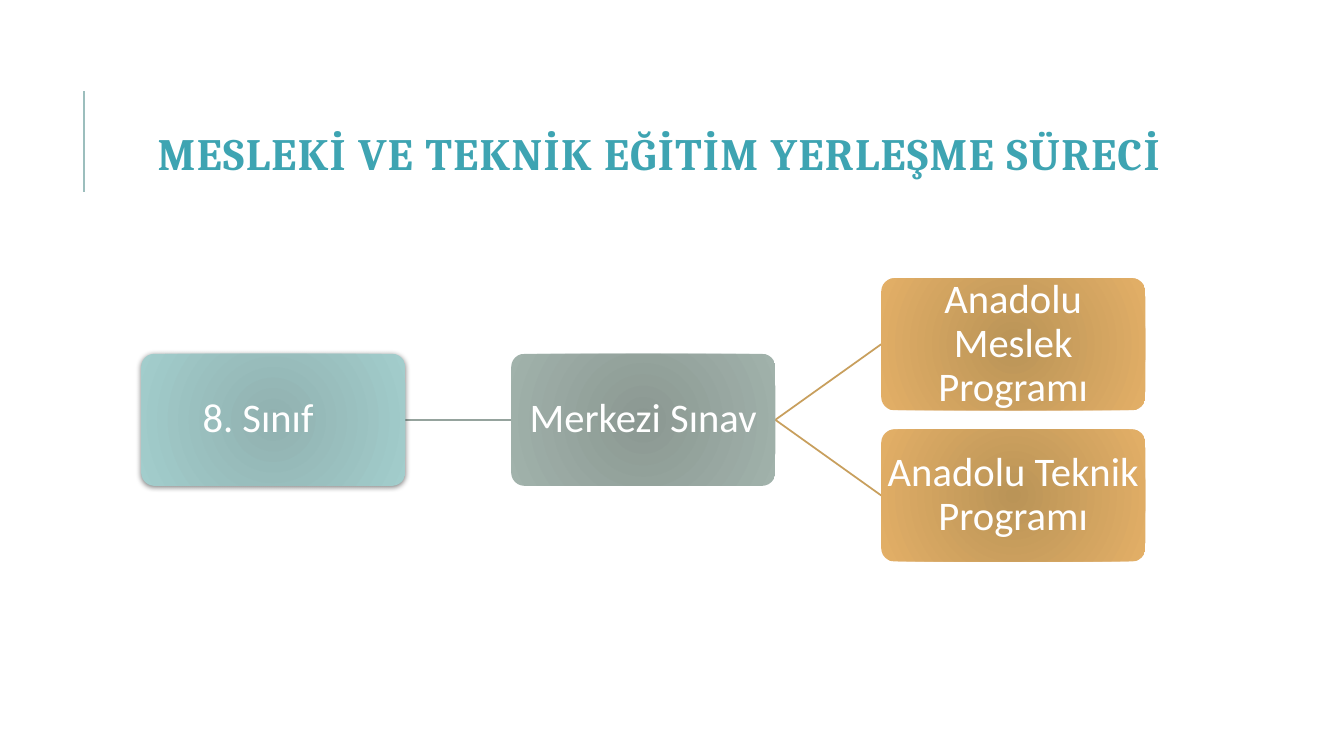
from dataclasses import dataclass

from lxml import etree
from pptx import Presentation
from pptx.dml.color import RGBColor
from pptx.enum.shapes import MSO_CONNECTOR, MSO_SHAPE
from pptx.enum.text import MSO_ANCHOR, MSO_AUTO_SIZE, PP_ALIGN
from pptx.oxml.ns import qn
from pptx.util import Pt

ROUNDED = MSO_SHAPE.ROUNDED_RECTANGLE
STRAIGHT = MSO_CONNECTOR.STRAIGHT
MIDDLE = MSO_ANCHOR.MIDDLE
CENTER = PP_ALIGN.CENTER
NO_FIT = MSO_AUTO_SIZE.NONE

# Content: text, column, half-row, gradient (centre, edge), right inset, shadow
TITLE = "MESLEKİ VE TEKNİK EĞİTİM YERLEŞME SÜRECİ"
STEPS = {
    "grade": ("8. Sınıf", 0, 1, ("91B1B0", "A2CDCC"), 32, True),
    "exam": ("Merkezi Sınav", 1, 1, ("8B9892", "A1B2AB"), 2, False),
    "vocational": ("Anadolu Meslek Programı", 2, 0, ("BA9457", "E3AF67"), 2, False),
    "technical": ("Anadolu Teknik Programı", 2, 2, ("BA9457", "E3AF67"), 2, False),
}
LINKS = [
    ("grade", "exam", "95A39D"),
    ("exam", "vocational", "C89F5D"),
    ("exam", "technical", "C89F5D"),
]


@dataclass(frozen=True)
class Theme:
    title_font: str = "Cambria"
    step_font: str = "Calibri"
    title_size: int = 32
    step_size: int = 29
    title_color: str = "3EA4B2"
    step_color: str = "FFFFFF"
    accent: str = "9CBEBD"
    accent_width: float = 1.5
    link_width: float = 1.25


THEME = Theme()

# Layout in px, 100 to the inch
SLIDE_W, SLIDE_H = 1333, 750
LEFT, TOP = 140, 276
BOX_W, BOX_H = 262, 131
COLUMN_PITCH, HALF_ROW = 367, 75


def px(length):
    return int(length * 9144)


def rgb(value):
    return RGBColor.from_string(value)


def format_text(frame, text, font, size, color, spacing):
    frame.text = text
    frame.word_wrap = True
    frame.auto_size = NO_FIT
    frame.vertical_anchor = MIDDLE
    paragraph = frame.paragraphs[0]
    paragraph.alignment = CENTER
    paragraph.line_spacing = spacing
    paragraph.font.name = font
    paragraph.font.size = Pt(size)
    paragraph.font.color.rgb = rgb(color)
    return paragraph


def add_line(slide, start, end, color, width):
    line = slide.shapes.add_connector(STRAIGHT, *map(px, start + end))
    line.line.color.rgb = rgb(color)
    line.line.width = Pt(width)
    etree.SubElement(line.element.spPr, qn("a:effectLst"))


def fill_radial(shape, colors):
    shape.fill.gradient()
    for stop, color in zip(shape.fill.gradient_stops, colors):
        stop.color.rgb = rgb(color)
    gradient = shape.element.spPr.find(qn("a:gradFill"))
    linear = gradient.find(qn("a:lin"))
    circle = etree.Element(qn("a:path"), path="circle")
    etree.SubElement(circle, qn("a:fillToRect"), dict.fromkeys("ltrb", "100000"))
    gradient.replace(linear, circle)


def add_shadow(shape):
    effects = shape.element.spPr.find(qn("a:effectLst"))
    shadow = etree.SubElement(effects, qn("a:outerShdw"), blurRad=str(Pt(4)),
                              dist=str(Pt(1)), dir="5400000", rotWithShape="0")
    black = etree.SubElement(shadow, qn("a:srgbClr"), val="000000")
    etree.SubElement(black, qn("a:alpha"), val="50000")


def box_origin(name):
    column, half_row = STEPS[name][1:3]
    return LEFT + column * COLUMN_PITCH, TOP + half_row * HALF_ROW


def add_step(slide, name):
    text, _, _, colors, right_inset, shadowed = STEPS[name]
    box = slide.shapes.add_shape(ROUNDED, *map(px, box_origin(name) + (BOX_W, BOX_H)))
    box.adjustments[0] = 0.1
    box.shadow.inherit = False
    box.line.fill.background()
    fill_radial(box, colors)
    if shadowed:
        add_shadow(box)
    frame = box.text_frame
    frame.margin_left = frame.margin_top = frame.margin_bottom = px(2)
    frame.margin_right = px(right_inset)
    format_text(frame, text, THEME.step_font, THEME.step_size, THEME.step_color, 0.9)


def add_link(slide, source, target, color):
    source_x, source_y = box_origin(source)
    target_x, target_y = box_origin(target)
    add_line(slide, (source_x + BOX_W, source_y + BOX_H / 2),
             (target_x, target_y + BOX_H / 2), color, THEME.link_width)


def main():
    deck = Presentation()
    deck.slide_width, deck.slide_height = px(SLIDE_W), px(SLIDE_H)
    slide = deck.slides.add_slide(deck.slide_layouts[5])

    # Title and accent line
    add_line(slide, (83, 190), (83, 90), THEME.accent, THEME.accent_width)
    title = slide.shapes.title
    title.left, title.top, title.width, title.height = map(px, (108, 92, 1092, 128))
    heading = format_text(title.text_frame, TITLE, THEME.title_font,
                          THEME.title_size, THEME.title_color, 0.8)
    heading.font.bold = True
    heading.runs[0].font.bold = True
    heading.runs[0].font._element.set("spc", "100")

    # Placement process
    for link in LINKS:
        add_link(slide, *link)
    for name in STEPS:
        add_step(slide, name)

    deck.save("out.pptx")


if __name__ == "__main__":
    main()
